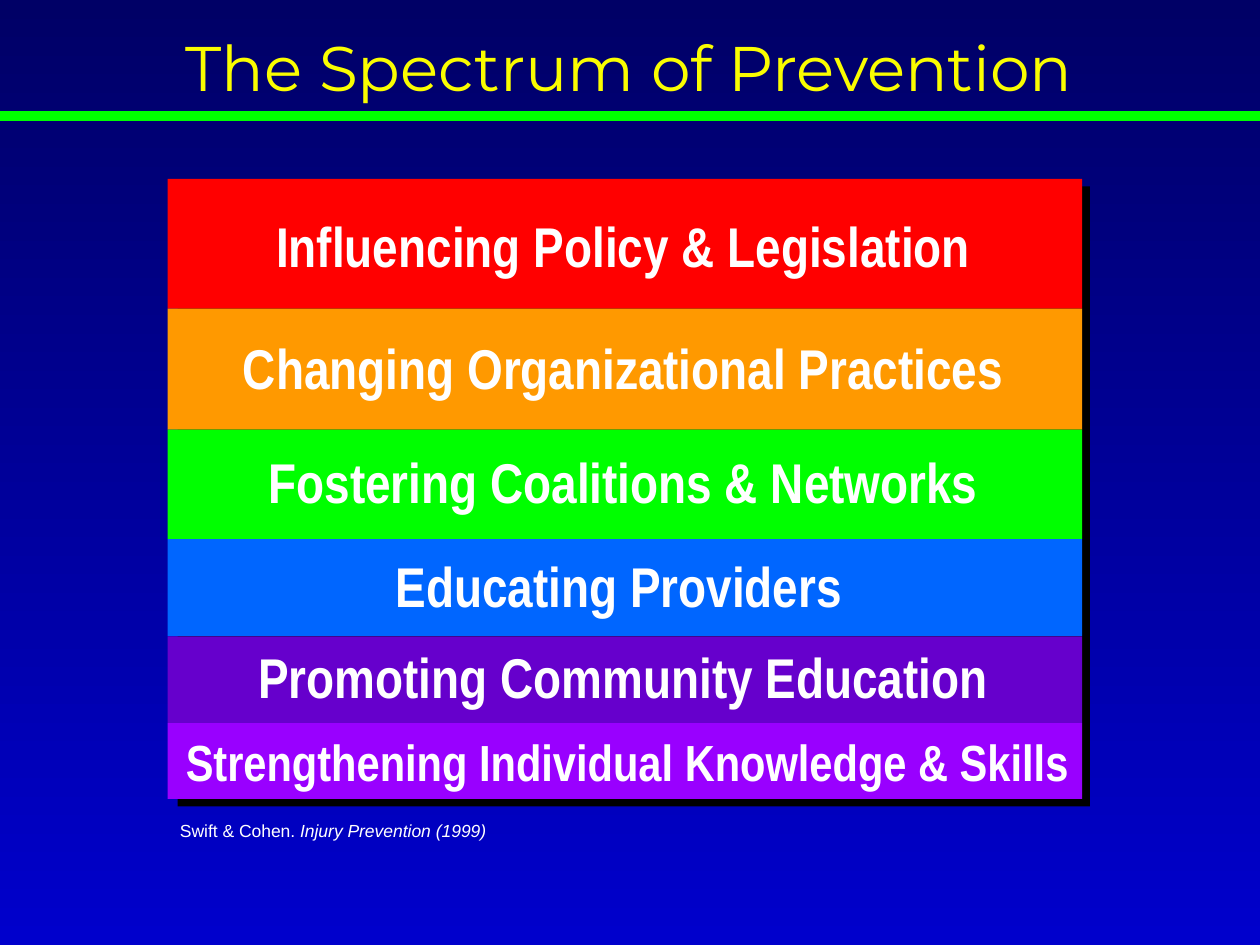
from lxml import etree
from pptx import Presentation
from pptx import util as u
from pptx.dml.color import RGBColor
from pptx.enum import shapes, text
from pptx.oxml import ns

COLORS = {
    "bg_top": "000066", "bg_bottom": "0000CC", "title": "FAFD00",
    "rule": "00FF00", "shadow": "000000", "text": "FFFFFF",
    "policy": "FF0000", "practices": "FF9900", "coalitions": "00FF00",
    "providers": "0066FF", "community": "6600CC", "individual": "9900FF",
}
BANDS = [
    ("policy", 1.42, "Influencing Policy & Legislation", (1.33, 1.63, 7.24, 0.63), 32),
    ("practices", 2.45, "Changing Organizational Practices", (1.33, 2.6, 7.24, 0.63), 32),
    ("coalitions", 3.41, "Fostering Coalitions & Networks", (1.33, 3.5, 7.24, 0.63), 32),
    ("providers", 4.28, "Educating Providers", (1.33, 4.33, 7.17, 0.63), 32),
    ("community", 5.05, "Promoting Community Education", (1.33, 5.05, 7.24, 0.63), 32),
    ("individual", 5.74, "Strengthening Individual Knowledge & Skills", (1.17, 5.75, 7.63, 0.58), 29),
]


def rgb(name):
    """Return the named colour."""
    return RGBColor.from_string(COLORS[name])


def inches(box):
    """Convert a box of numbers to lengths."""
    return [u.Inches(v) for v in box]


def add_rect(s, box, color):
    """Add a plain filled rectangle."""
    sp = s.shapes.add_shape(shapes.MSO_SHAPE.RECTANGLE, *inches(box))
    sp.shadow.inherit = False
    sp.fill.solid()
    sp.fill.fore_color.rgb = rgb(color)
    sp.line.fill.background()


def add_text(s, box, runs, font, size, color="text", bold=False,
             align=text.PP_ALIGN.CENTER, anchor=text.MSO_ANCHOR.TOP):
    """Add one paragraph of (words, italic) runs."""
    tf = s.shapes.add_textbox(*inches(box)).text_frame
    tf.word_wrap = True
    tf.vertical_anchor = anchor
    p = tf.paragraphs[0]
    p.alignment = align
    for words, italic in runs:
        r = p.add_run()
        r.text = words
        r.font.name = font
        r.font.size = u.Pt(size)
        r.font.bold = bold
        r.font.italic = italic
        r.font.color.rgb = rgb(color)


def add_background(s):
    """Fill the slide with a vertical gradient."""
    fill = s.background.fill
    fill.gradient()
    fill.gradient_angle = 270
    for stop, name, position in zip(fill.gradient_stops, ("bg_top", "bg_bottom"), (0, 1)):
        stop.color.rgb = rgb(name)
        stop.position = position


def add_header(s, box, rule_y):
    """Add the title and the full-width rule below it."""
    add_text(s, box, [("The Spectrum of Prevention", False)], "Montserrat", 36,
             color="title", anchor=text.MSO_ANCHOR.MIDDLE)
    rule = s.shapes.add_connector(shapes.MSO_CONNECTOR.STRAIGHT, *inches((0, rule_y, 10, rule_y)))
    rule.line.color.rgb = rgb("rule")
    rule.line.width = u.Pt(6)
    etree.SubElement(rule._element.spPr, ns.qn("a:effectLst"))


def add_spectrum(s, left, width, bottom):
    """Stack the coloured bands over their shadow and label them."""
    add_rect(s, (1.41, 1.48, 7.24, 4.92), "shadow")
    ends = [band[1] for band in BANDS[1:]] + [bottom]
    for (color, top, label, label_box, size), end in zip(BANDS, ends):
        add_rect(s, (left, top, width, end - top), color)
        add_text(s, label_box, [(label, False)], "Arial Narrow", size, bold=True)


def add_source(s, box):
    """Add the citation line."""
    add_text(s, box, [("Swift & Cohen.", False), (" Injury Prevention (1999)", True)],
             "Arial", 10, align=text.PP_ALIGN.LEFT)


def main():
    """Build and save the slide."""
    prs = Presentation()
    prs.slide_width, prs.slide_height = u.Inches(10), u.Inches(7.5)
    s = prs.slides.add_slide(prs.slide_layouts[6])
    add_background(s)
    add_spectrum(s, 1.33, 7.26, 6.34)
    add_header(s, (0.53, 0.25, 8.93, 0.55), 0.92)
    add_source(s, (1.33, 6.46, 4.78, 0.27))
    prs.save("out.pptx")


if __name__ == "__main__":
    main()
